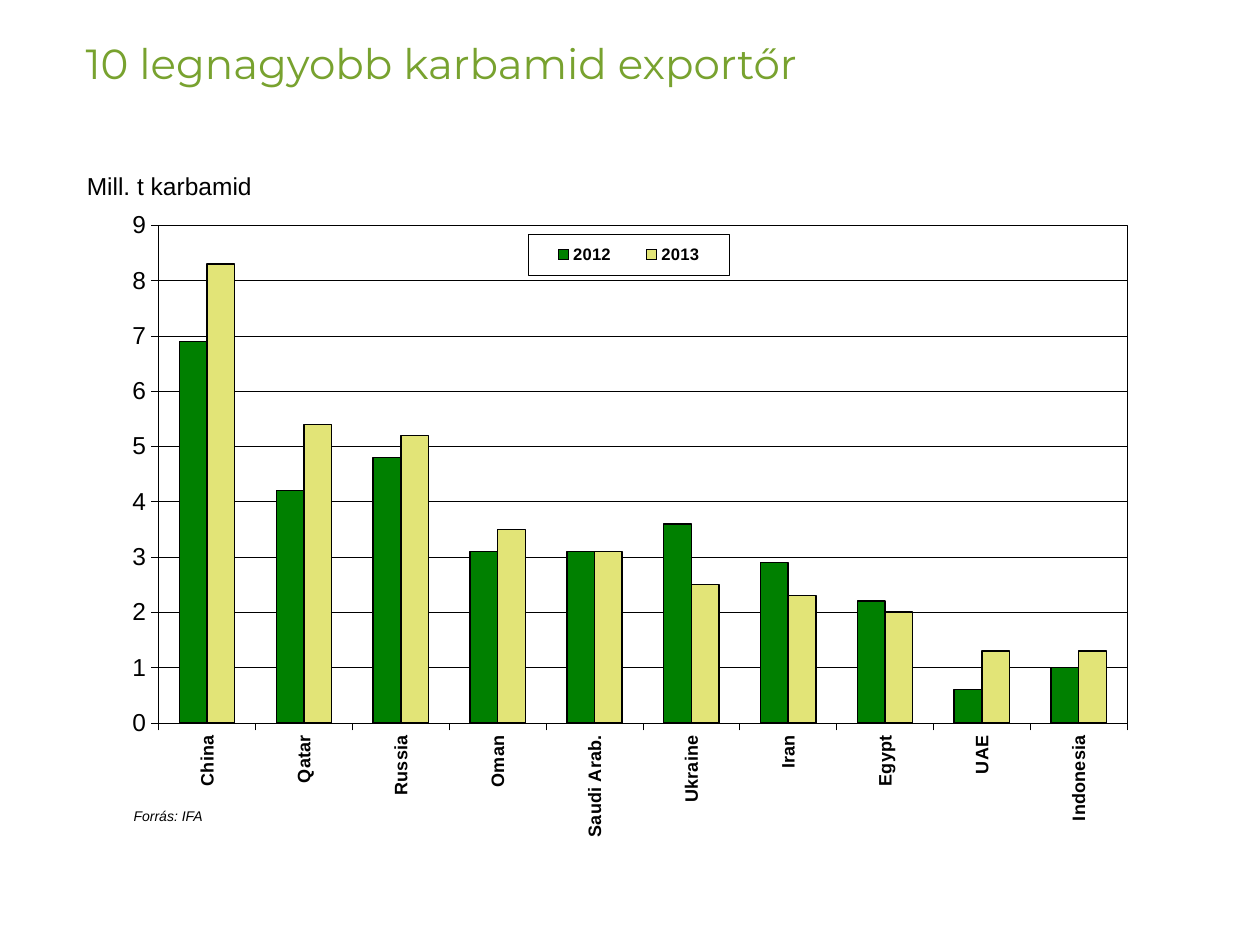
from lxml import etree
from pptx import Presentation
from pptx.chart.data import CategoryChartData
from pptx.dml.color import RGBColor
from pptx.enum.chart import XL_CHART_TYPE, XL_LEGEND_POSITION, XL_TICK_MARK
from pptx.enum.text import MSO_AUTO_SIZE
from pptx.oxml import parse_xml
from pptx.oxml.ns import nsdecls, qn
from pptx.util import Pt

COLUMNS = XL_CHART_TYPE.COLUMN_CLUSTERED
LEGEND_RIGHT = XL_LEGEND_POSITION.RIGHT
TICK_OUTSIDE, TICK_NONE = XL_TICK_MARK.OUTSIDE, XL_TICK_MARK.NONE
FIT_SHAPE, NO_FIT = MSO_AUTO_SIZE.SHAPE_TO_FIT_TEXT, MSO_AUTO_SIZE.NONE

BLACK, TITLE_GREEN = "000000", "78A22F"
HAIRLINE = 0.22
COUNTRIES = ["China", "Qatar", "Russia", "Oman", "Saudi Arab.",
             "Ukraine", "Iran", "Egypt", "UAE", "Indonesia"]
EXPORTS = {
    "2012": ("008000", [6.9, 4.2, 4.8, 3.1, 3.1, 3.6, 2.9, 2.2, 0.6, 1]),
    "2013": ("E2E477", [8.3, 5.4, 5.2, 3.5, 3.1, 2.5, 2.3, 2, 1.3, 1.3]),
}


def rgb(color):
    return RGBColor.from_string(color)


def style_font(font, size, color=BLACK, name="Arial", bold=False, italic=False):
    font.size, font.name = Pt(size), name
    font.bold, font.italic = bold, italic
    font.color.rgb = rgb(color)


def style_line(line, width, color=BLACK):
    line.color.rgb = rgb(color)
    line.width = Pt(width)


def add_text(slide, text, left, top, width, height, wrap=False,
             insets=(7.2, 3.6, 7.2, 3.6), **font_format):
    box = slide.shapes.add_textbox(Pt(left), Pt(top), Pt(width), Pt(height))
    frame = box.text_frame
    frame.word_wrap = wrap
    frame.auto_size = NO_FIT if wrap else FIT_SHAPE
    (frame.margin_left, frame.margin_top,
     frame.margin_right, frame.margin_bottom) = map(Pt, insets)
    run = frame.paragraphs[0].add_run()
    run.text = text
    style_font(run.font, **font_format)


def manual_layout(x, y, w, h, inner=False):
    """Return a chart layout given in fractions of the chart area."""
    layout = etree.Element(qn("c:layout"))
    manual = etree.SubElement(layout, qn("c:manualLayout"))
    settings = [("layoutTarget", "inner")] if inner else []
    settings += [("xMode", "edge"), ("yMode", "edge"),
                 ("x", x), ("y", y), ("w", w), ("h", h)]
    for tag, value in settings:
        etree.SubElement(manual, qn(f"c:{tag}"), val=str(value))
    return layout


def frame_properties(fill):
    """Return the fill and thin black border of a chart part."""
    return parse_xml(
        f'<c:spPr {nsdecls("c", "a")}>{fill}<a:ln w="{int(Pt(HAIRLINE))}">'
        f'<a:solidFill><a:srgbClr val="{BLACK}"/></a:solidFill></a:ln></c:spPr>')


def style_axis(axis, size, bold=False):
    axis.major_tick_mark, axis.minor_tick_mark = TICK_OUTSIDE, TICK_NONE
    style_line(axis.format.line, HAIRLINE)
    style_font(axis.tick_labels.font, size, bold=bold)


def style_plot_area(chart):
    plot_area = chart.plots[0]._element.getparent()
    for layout in plot_area.findall(qn("c:layout")):
        plot_area.remove(layout)
    plot_area.insert(0, manual_layout(0.059, 0.085, 0.925, 0.674, inner=True))
    plot_area.append(frame_properties("<a:noFill/>"))


def add_legend(chart):
    chart.has_legend = True
    legend = chart.legend
    legend.position = LEGEND_RIGHT
    legend.include_in_layout = False
    style_font(legend.font, 9.5, bold=True)
    element = legend._element
    for layout in element.findall(qn("c:layout")):
        element.remove(layout)
    element.find(qn("c:legendPos")).addnext(
        manual_layout(0.412, 0.097, 0.192, 0.056))
    element.find(qn("c:overlay")).addnext(frame_properties(
        '<a:solidFill><a:srgbClr val="FFFFFF"/></a:solidFill>'))


def add_export_chart(slide, left, top, width, height):
    data = CategoryChartData()
    data.categories = COUNTRIES
    for year, (_, values) in EXPORTS.items():
        data.add_series(year, values)
    chart = slide.shapes.add_chart(
        COLUMNS, Pt(left), Pt(top), Pt(width), Pt(height), data).chart
    chart.has_title = False
    style_font(chart.font, 19, name="Montserrat", bold=True)

    plot = chart.plots[0]
    plot.gap_width, plot.overlap, plot.vary_by_categories = 150, 0, False
    for series, (color, _) in zip(plot.series, EXPORTS.values()):
        series.invert_if_negative = False
        series.format.fill.solid()
        series.format.fill.fore_color.rgb = rgb(color)
        style_line(series.format.line, 0.86)

    country_axis, tonnage_axis = chart.category_axis, chart.value_axis
    style_axis(country_axis, 10.3, bold=True)
    country_labels = country_axis._element.find(qn("c:txPr"))
    country_labels.find(qn("a:bodyPr")).set("rot", "-5400000")
    country_labels.find(qn("a:bodyPr")).set("vert", "horz")

    style_axis(tonnage_axis, 14)
    tonnage_axis.minimum_scale, tonnage_axis.maximum_scale = 0, 9
    tonnage_axis.major_unit = 1
    tonnage_axis.tick_labels.number_format = "0"
    tonnage_axis.tick_labels.number_format_is_linked = False
    tonnage_axis.has_major_gridlines = True
    style_line(tonnage_axis.major_gridlines.format.line, HAIRLINE)

    style_plot_area(chart)
    add_legend(chart)


def main():
    deck = Presentation()
    deck.slide_width, deck.slide_height = Pt(720), Pt(540)
    slide = deck.slides.add_slide(deck.slide_layouts[6])
    add_export_chart(slide, 55.4, 92.9, 598.3, 421.9)
    add_text(slide, "Mill. t karbamid", 42.5, 94.3, 109.4, 24.5, size=14)
    add_text(slide, "10 legnagyobb karbamid exportőr", 41.8, 18, 635.8, 67,
             wrap=True, size=24, color=TITLE_GREEN, name="Montserrat")
    add_text(slide, "Forrás: IFA", 76.3, 458.6, 49, 15.1,
             insets=(0, 2.9, 8.6, 2.9), size=8, italic=True)
    deck.save("out.pptx")


if __name__ == "__main__":
    main()
